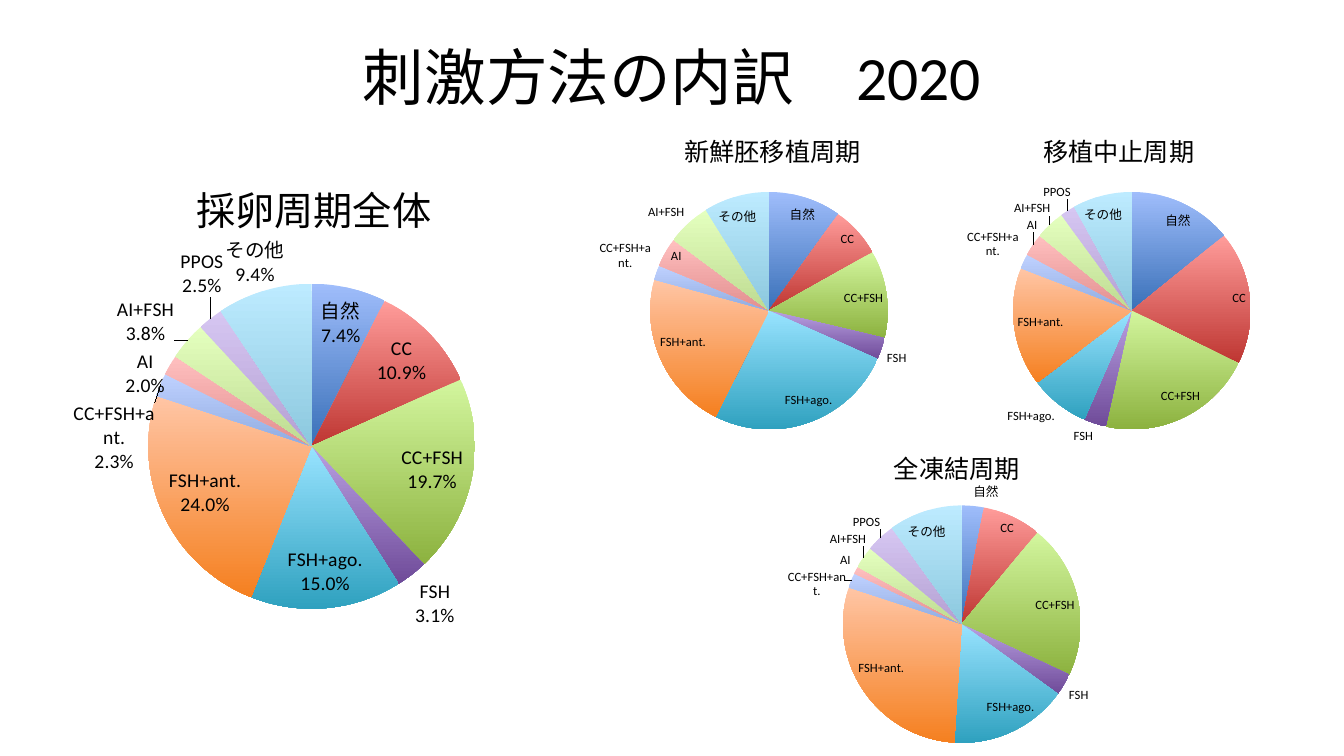
"""Build a slide of four pie charts on ovarian stimulation methods in 2020."""
from lxml.etree import SubElement
from pptx import Presentation
from pptx.chart.data import CategoryChartData
from pptx.dml.color import RGBColor
from pptx.enum.chart import XL_CHART_TYPE, XL_LABEL_POSITION
from pptx.enum.text import MSO_ANCHOR, PP_ALIGN
from pptx.oxml import parse_xml
from pptx.oxml.ns import nsdecls, qn
from pptx.util import Pt

BLACK = RGBColor(0x00, 0x00, 0x00)
SLICE_COLORS = [
    (RGBColor(0x9F, 0xBD, 0xFB), RGBColor(0x39, 0x70, 0xB8)),
    (RGBColor(0xFF, 0x9C, 0x9A), RGBColor(0xBE, 0x36, 0x32)),
    (RGBColor(0xD3, 0xF6, 0x9E), RGBColor(0x8C, 0xB2, 0x3F)),
    (RGBColor(0xB9, 0xA0, 0xE2), RGBColor(0x6F, 0x4B, 0x99)),
    (RGBColor(0x98, 0xE3, 0xFF), RGBColor(0x2F, 0xA1, 0xBF)),
    (RGBColor(0xFF, 0xC5, 0xA5), RGBColor(0xF5, 0x80, 0x20)),
    (RGBColor(0xBF, 0xD1, 0xFF), RGBColor(0x90, 0xAC, 0xE0)),
    (RGBColor(0xFF, 0xBF, 0xBF), RGBColor(0xE2, 0x8F, 0x8F)),
    (RGBColor(0xE4, 0xFF, 0xBE), RGBColor(0xBE, 0xDB, 0x92)),
    (RGBColor(0xD6, 0xC6, 0xF2), RGBColor(0xB4, 0xA0, 0xD2)),
    (RGBColor(0xBD, 0xEB, 0xFF), RGBColor(0x8C, 0xC8, 0xDE)),
]
METHODS = ["自然", "CC", "CC+FSH", "FSH", "FSH+ago.", "FSH+ant.",
           "CC+FSH+ant.", "AI", "AI+FSH", "PPOS", "その他"]
PIES = [
    ((39.6, 166.3, 357.8, 300.2), 14, True,
     (7.4, 10.9, 19.7, 3.1, 15, 24, 2.3, 2, 3.8, 2.5, 9.4)),
    ((554.4, 335.5, 259.2, 218.2), 9, False,
     (3, 8, 21, 3, 16, 29, 2, 1, 3, 4, 10)),
    ((422.6, 111.6, 247.7, 218.2), 9, False,
     (10, 7, 12, 3, 26, 22, 2, 4, 6, 0, 9)),
    ((681.8, 111.6, 247.7, 218.2), 9, False,
     (14, 18, 21, 3, 8, 16, 2, 3, 4, 2, 8)),
]
CAPTIONS = [
    ("採卵周期全体", (133.2, 129.6, 184.3, 41), 28),
    ("全凍結周期", (631.4, 320.4, 105.1, 28.8), 18),
    ("移植中止周期", (738, 93.6, 123.8, 28.8), 18),
    ("新鮮胚移植周期", (481.7, 93.6, 141.8, 28.8), 18),
]
PLOT_LAYOUT = {"layoutTarget": "inner", "xMode": "edge", "yMode": "edge",
               "x": 0.119, "y": 0.117, "w": 0.785, "h": 0.777}


def add_label(text, frame, size, font_name):
    """Add a one-line text box and return its text frame."""
    box = page.shapes.add_textbox(*map(Pt, frame))
    box.text_frame.word_wrap = False
    span = box.text_frame.paragraphs[0].add_run()
    span.text = text
    span.font.name = font_name
    span.font.size = Pt(size)
    span.font.color.rgb = BLACK
    return box.text_frame


def add_pie(frame, label_size, show_percent, values):
    """Add a pie with gradient slices and category labels."""
    data = CategoryChartData()
    data.categories = METHODS
    data.add_series("Series 1", values)
    chart = page.shapes.add_chart(XL_CHART_TYPE.PIE, *map(Pt, frame), data).chart
    chart.has_title = False
    chart.has_legend = False
    chart.font.name = "Calibri"
    chart.font.size = Pt(label_size)
    chart.font.color.rgb = BLACK

    plot_area = chart.element.find(".//" + qn("c:plotArea"))
    for old_layout in plot_area.findall(qn("c:layout")):
        plot_area.remove(old_layout)
    layout = parse_xml(f"<c:layout {nsdecls('c')}><c:manualLayout/></c:layout>")
    for tag, value in PLOT_LAYOUT.items():
        SubElement(layout[0], qn("c:" + tag)).set("val", str(value))
    plot_area.insert(0, layout)

    series = chart.plots[0].series[0]
    for index, (top, bottom) in enumerate(SLICE_COLORS):
        fill = series.points[index].format.fill
        fill.gradient()
        fill.gradient_angle = 270
        for stop, color in zip(fill.gradient_stops, (top, bottom)):
            stop.color.rgb = color

    labels = series.data_labels
    labels.show_value = False
    labels.show_category_name = True
    labels.show_percentage = show_percent
    labels.number_format = "0.0%"
    labels.number_format_is_linked = False
    labels.position = XL_LABEL_POSITION.BEST_FIT
    labels.font.name = "Calibri"
    labels.font.size = Pt(label_size)
    labels.font.color.rgb = BLACK
    separator = parse_xml(f"<c:separator {nsdecls('c')}>\n</c:separator>")
    series.data_labels._element.find(qn("c:showBubbleSize")).addnext(separator)


deck = Presentation()
deck.slide_width = Pt(960)
deck.slide_height = Pt(540)
page = deck.slides.add_slide(deck.slide_layouts[6])

title = add_label("刺激方法の内訳\u30002020".replace("\u3000", "　"), (48, 21.6, 864, 65.5), 44, "Calibri")
title.word_wrap = True
title.vertical_anchor = MSO_ANCHOR.MIDDLE
title.paragraphs[0].alignment = PP_ALIGN.CENTER

for pie in PIES:
    add_pie(*pie)
for text, frame, size in CAPTIONS:
    add_label(text, frame, size, "Arial")

deck.save("out.pptx")
